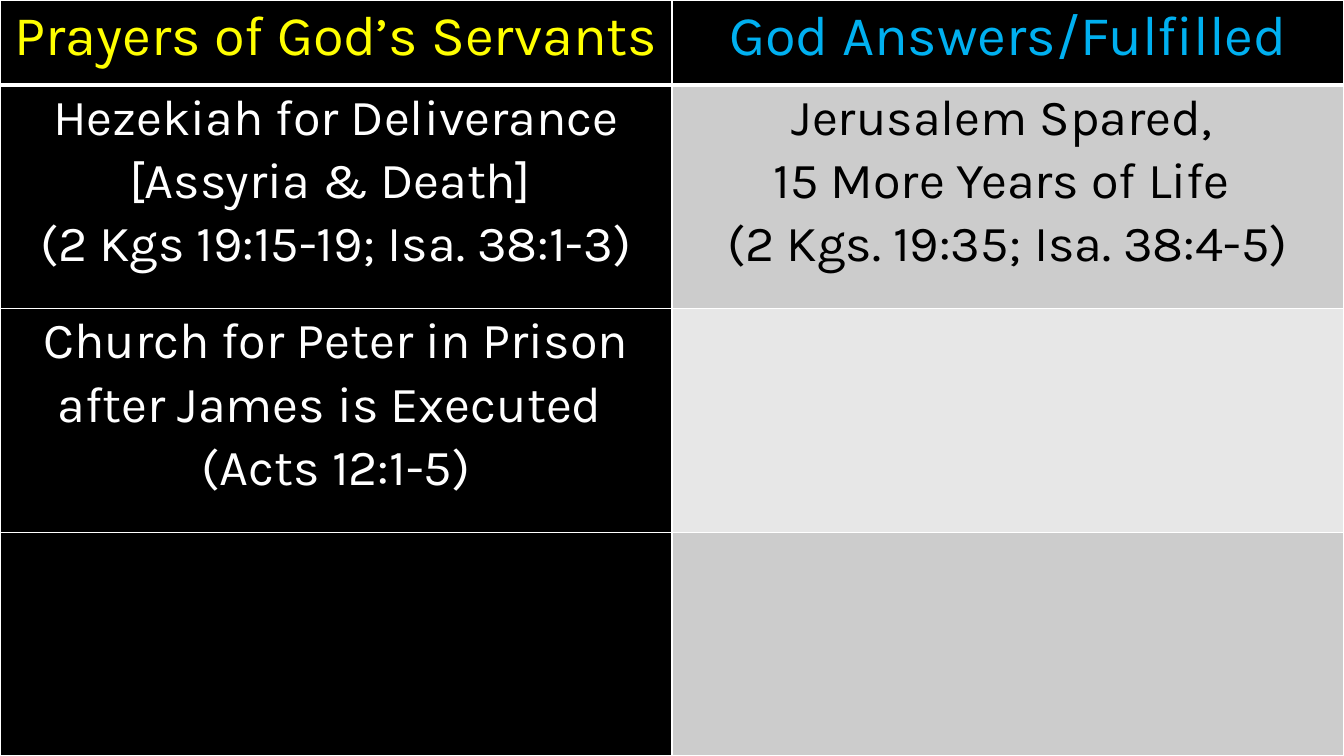
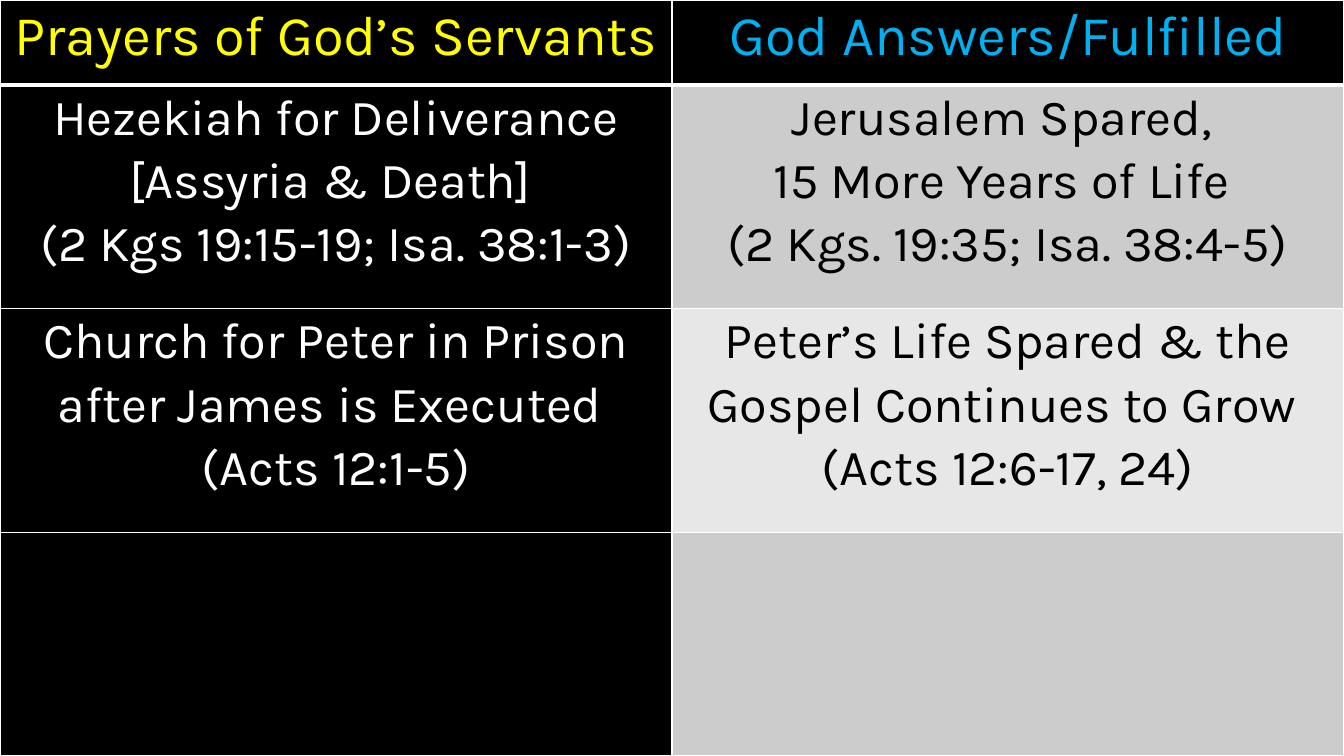
from lxml.etree import SubElement
from pptx import Presentation
from pptx.dml.color import RGBColor
from pptx.enum.text import PP_ALIGN
from pptx.oxml.ns import qn
from pptx.util import Pt

PX = 9525  # EMU per px, 96 px to the inch
SLIDE_W, SLIDE_H = 1280, 720
HEADER_H = 81
CELL_INSET = 7

BLACK = RGBColor(0x00, 0x00, 0x00)
WHITE = RGBColor(0xFF, 0xFF, 0xFF)
YELLOW = RGBColor(0xFF, 0xFF, 0x00)
SKY_BLUE = RGBColor(0x00, 0xB0, 0xF0)
GREY = RGBColor(0xCC, 0xCC, 0xCC)
PALE_GREY = RGBColor(0xE7, 0xE7, 0xE7)

FONT = "Karla"
HEADER_SIZE, BODY_SIZE = 40, 36

HEADINGS = [("Prayers of God’s Servants", YELLOW),
            ("God Answers/Fulfilled", SKY_BLUE)]
HEZEKIAH = (["Hezekiah for Deliverance [Assyria & Death] ",
             "(2 Kgs 19:15-19; Isa. 38:1-3)"],
            ["Jerusalem Spared, ", "15 More Years of Life ",
             "(2 Kgs. 19:35; Isa. 38:4-5)"])
PETER_PRAYER = ["Church for Peter in Prison after James is Executed ",
                "(Acts 12:1-5)"]
PETER_ANSWER = ["Peter’s Life Spared & the Gospel Continues to Grow ",
                "(Acts 12:6-17, 24)"]
NOTHING_YET = ([], [])

# Each slide reveals one more answer
SLIDES = [[HEZEKIAH, (PETER_PRAYER, []), NOTHING_YET],
          [HEZEKIAH, (PETER_PRAYER, PETER_ANSWER), NOTHING_YET]]


def set_borders(cell, bottom=1, top=1):
    """Add white borders; call before the fill, which must follow them."""
    props = cell._tc.get_or_add_tcPr()
    for side, width in (("L", 1), ("R", 1), ("T", top), ("B", bottom)):
        line = SubElement(props, qn(f"a:ln{side}"), w=str(Pt(width)))
        paint = SubElement(line, qn("a:solidFill"))
        SubElement(paint, qn("a:srgbClr"), val=str(WHITE))


def fill_cell(cell, lines, size, color, background):
    cell.fill.solid()
    cell.fill.fore_color.rgb = background
    cell.margin_left = cell.margin_right = CELL_INSET * PX
    cell.margin_top = cell.margin_bottom = 0
    cell.text_frame.text = "\n".join(lines)
    for paragraph in cell.text_frame.paragraphs:
        paragraph.alignment = PP_ALIGN.CENTER
        paragraph.line_spacing = 1.07
        paragraph.font.size = Pt(size)
        for run in paragraph.runs:
            run.font.name = FONT
            run.font.size = Pt(size)
            run.font.color.rgb = color


def add_prayer_table(slide, left, top, width, height, entries):
    table = slide.shapes.add_table(
        len(entries) + 1, len(HEADINGS),
        left * PX, top * PX, width * PX, height * PX).table
    for column in table.columns:
        column.width = width * PX // len(HEADINGS)
    entry_height = (height - HEADER_H) * PX // len(entries)

    # Header row
    table.rows[0].height = HEADER_H * PX
    for col, (heading, color) in enumerate(HEADINGS):
        cell = table.cell(0, col)
        set_borders(cell, bottom=3)
        fill_cell(cell, [heading], HEADER_SIZE, color, BLACK)

    # Prayers on black, answers on alternating greys
    for row, (prayer, answer) in enumerate(entries, start=1):
        table.rows[row].height = entry_height
        band = GREY if row % 2 else PALE_GREY
        styles = [(prayer, WHITE, BLACK), (answer, BLACK, band)]
        for col, (lines, color, background) in enumerate(styles):
            cell = table.cell(row, col)
            set_borders(cell, top=3 if row == 1 else 1)
            fill_cell(cell, lines, BODY_SIZE, color, background)


def add_prayer_slide(deck, entries):
    slide = deck.slides.add_slide(deck.slide_layouts[6])
    slide.background.fill.solid()
    slide.background.fill.fore_color.rgb = BLACK
    add_prayer_table(slide, 0, 0, SLIDE_W, SLIDE_H, entries)


def main():
    deck = Presentation()
    deck.slide_width, deck.slide_height = SLIDE_W * PX, SLIDE_H * PX
    for entries in SLIDES:
        add_prayer_slide(deck, entries)
    deck.save("out.pptx")


if __name__ == "__main__":
    main()
